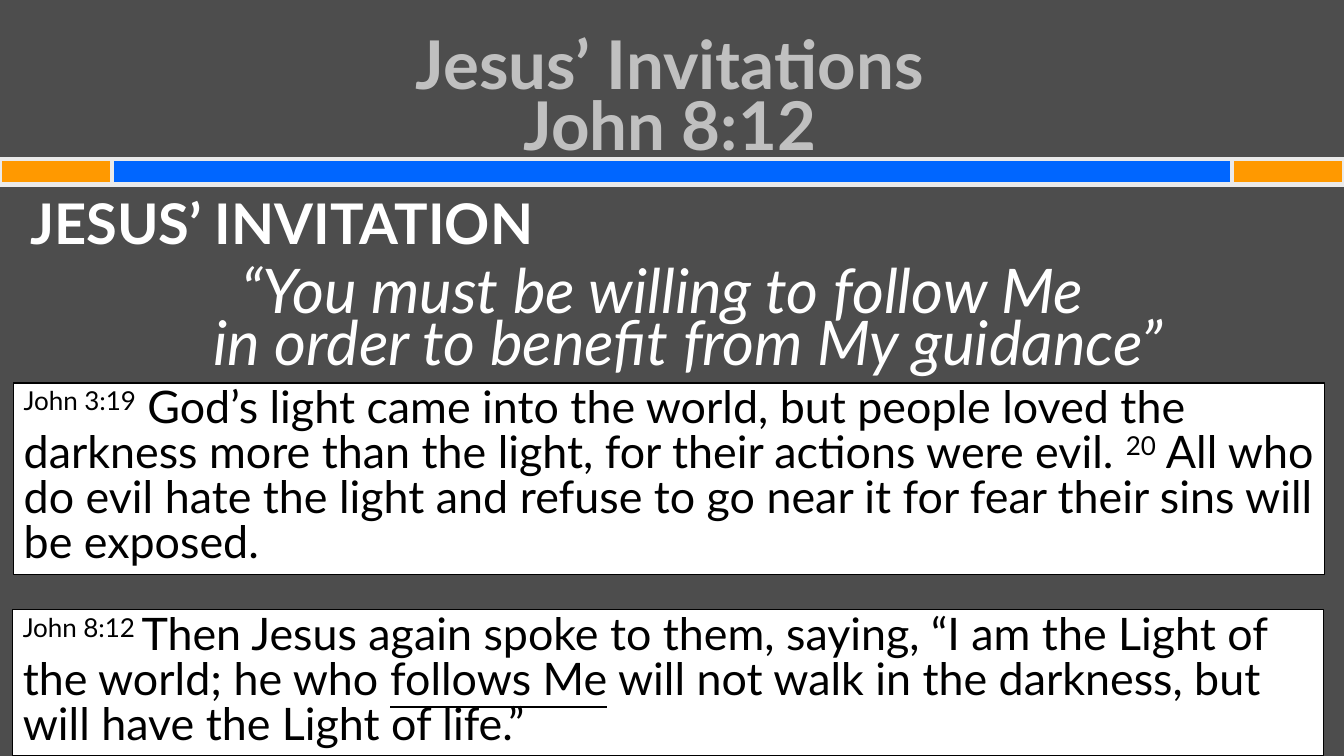
import dataclasses

import lxml.etree
import pptx
import pptx.dml.color
import pptx.enum.shapes
import pptx.enum.text
import pptx.oxml.ns
import pptx.util

Pt = pptx.util.Pt
RGB = pptx.dml.color.RGBColor.from_string
ALIGN = pptx.enum.text.PP_ALIGN
ANCHOR = pptx.enum.text.MSO_ANCHOR
FIT = pptx.enum.text.MSO_AUTO_SIZE
qn = pptx.oxml.ns.qn


@dataclasses.dataclass(frozen=True)
class Theme:
    """Colours, font and type sizes of the slide."""
    font: str = "Lato"
    background: str = "4D4D4D"
    title: str = "C0C0C0"
    light: str = "FFFFFF"
    dark: str = "000000"
    band: str = "0066FF"
    band_end: str = "FF9900"
    band_line: str = "EAEAEA"
    title_size: int = 48
    heading_size: int = 40
    quote_size: int = 44
    verse_size: int = 32


THEME = Theme()


def place(sp, left, top, width, height):
    """Move and size a shape, in points."""
    sp.left, sp.top, sp.width, sp.height = Pt(left), Pt(top), Pt(width), Pt(height)


def add_run(p, text, size, color, bold=False, italic=False, underline=False, raised=False):
    """Add one formatted run to a paragraph."""
    r = p.add_run()
    r.text = text
    r.font.name = THEME.font
    r.font.size = Pt(size)
    r.font.color.rgb = RGB(color)
    r.font.bold, r.font.italic, r.font.underline = bold, italic, underline
    if raised:
        r.font._element.set("baseline", "30000")


def add_lines(p, lines, size, color, **style):
    """Add runs parted by line breaks."""
    for i, line in enumerate(lines):
        if i:
            p.add_line_break()
        add_run(p, line, size, color, **style)


def add_box(s, left, top, width, height, fill, line, weight):
    """Add a flat outlined rectangle."""
    sp = s.shapes.add_shape(pptx.enum.shapes.MSO_SHAPE.RECTANGLE,
                            Pt(left), Pt(top), Pt(width), Pt(height))
    sp.shadow.inherit = False
    sp.fill.solid()
    sp.fill.fore_color.rgb = RGB(fill)
    sp.line.color.rgb = RGB(line)
    sp.line.width = Pt(weight)
    return sp


def add_band(s, top, height, width, end):
    """Add the divider band with its two end blocks."""
    for left, w, color in ((0, width, THEME.band), (0, end, THEME.band_end),
                           (width - end, end, THEME.band_end)):
        add_box(s, left, top, w, height, color, THEME.band_line, 3)


def fill_title(sp, lines):
    """Format the title placeholder."""
    place(sp, 14.4, 33.1, 928, 80.6)
    tf = sp.text_frame
    tf.auto_size = FIT.NONE
    tf.vertical_anchor = ANCHOR.MIDDLE
    p = tf.paragraphs[0]
    p.alignment = ALIGN.CENTER
    p.line_spacing = Pt(44)
    add_lines(p, lines, THEME.title_size, THEME.title, bold=True)


def format_body(p, align):
    """Set hanging indent, tight spacing and no bullet."""
    p.alignment = align
    p.line_spacing = 0.7
    pPr = p._p.get_or_add_pPr()
    pPr.set("marL", str(Pt(27)))
    pPr.set("indent", str(Pt(-27)))
    before = lxml.etree.SubElement(pPr, qn("a:spcBef"))
    lxml.etree.SubElement(before, qn("a:spcPct")).set("val", "30000")
    lxml.etree.SubElement(pPr, qn("a:buNone"))


def fill_body(sp, heading, quote):
    """Format the body placeholder with a heading and a quotation."""
    place(sp, 14.4, 144, 928, 383.8)
    tf = sp.text_frame
    tf.auto_size = FIT.NONE
    p = tf.paragraphs[0]
    format_body(p, ALIGN.LEFT)
    add_run(p, heading, THEME.heading_size, THEME.light, bold=True)
    p = tf.add_paragraph()
    format_body(p, ALIGN.CENTER)
    add_lines(p, quote, THEME.quote_size, THEME.light, italic=True)


def add_verse(s, left, top, height, parts):
    """Add a verse box from pairs of text and run style."""
    sp = add_box(s, left, top, 936, height, THEME.light, THEME.dark, 0.75)
    tf = sp.text_frame
    tf.word_wrap = True
    tf.auto_size = FIT.SHAPE_TO_FIT_TEXT
    tf.vertical_anchor = ANCHOR.TOP
    p = tf.paragraphs[0]
    p.alignment = ALIGN.LEFT
    p.line_spacing = Pt(32)
    for text, style in parts:
        add_run(p, text, THEME.verse_size, THEME.dark, **style)


def main():
    """Build the slide and save it."""
    prs = pptx.Presentation()
    prs.slide_width, prs.slide_height = Pt(960), Pt(540)
    s = prs.slides.add_slide(prs.slide_layouts[1])
    s.background.fill.solid()
    s.background.fill.fore_color.rgb = RGB(THEME.background)
    add_band(s, 113.8, 18, 960, 80)
    fill_title(s.shapes.title, ("Jesus’ Invitations", "John 8:12"))
    fill_body(s.placeholders[1], "JESUS’ INVITATION",
              ("“You must be willing to follow Me ", "in order to benefit from My guidance”"))
    raised = {"raised": True}
    add_verse(s, 9.2, 435.6, 104.4, (
        ("John 8:12 ", raised),
        ("Then Jesus again spoke to them, saying, “I am the Light of the world; he who ", {}),
        ("follows Me", {"underline": True}),
        (" will not walk in the darkness, but will have the Light of life.”", {})))
    add_verse(s, 9.9, 273.6, 136.8, (
        ("John 3:19", raised),
        (" God’s light came into the world, but people loved the darkness more than "
         "the light, for their actions were evil. ", {}),
        ("20", raised),
        (" All who do evil hate the light and refuse to go near it for fear their "
         "sins will be exposed.", {})))
    prs.save("out.pptx")


if __name__ == "__main__":
    main()
